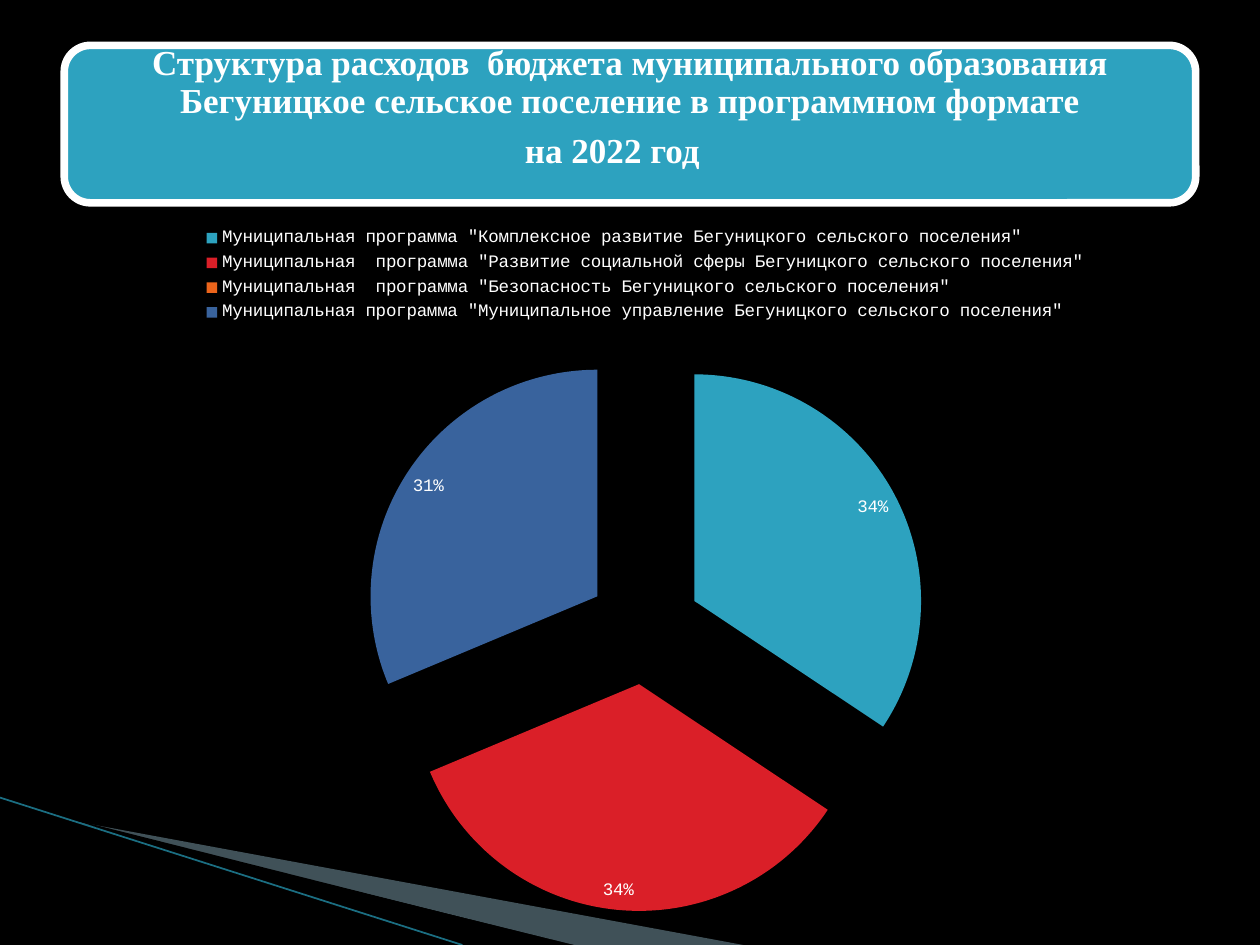
from collections import namedtuple
from dataclasses import dataclass

from lxml import etree
from pptx import Presentation
from pptx.chart.data import CategoryChartData
from pptx.dml.color import RGBColor
from pptx.enum.chart import XL_CHART_TYPE, XL_LABEL_POSITION, XL_LEGEND_POSITION
from pptx.enum.shapes import MSO_CONNECTOR, MSO_SHAPE
from pptx.enum.text import MSO_ANCHOR, PP_ALIGN
from pptx.oxml.ns import qn
from pptx.util import Inches, Pt

PIE = XL_CHART_TYPE.PIE_EXPLODED
BEST_FIT = XL_LABEL_POSITION.BEST_FIT
LEGEND_TOP = XL_LEGEND_POSITION.TOP
STRAIGHT = MSO_CONNECTOR.STRAIGHT
ROUNDED = MSO_SHAPE.ROUNDED_RECTANGLE
TOP = MSO_ANCHOR.TOP
CENTER = PP_ALIGN.CENTER

Box = namedtuple("Box", "left top width height")


@dataclass(frozen=True)
class Theme:
    background: str = "000000"
    text: str = "FFFFFF"
    banner: str = "2DA2BF"
    wedge: str = "A0CBDC"
    ray: str = "1B6E82"
    slices: tuple = ("2DA2BF", "DA1F28", "EB641B", "39639D")
    title_font: str = "Times New Roman"
    chart_font: str = "Courier New"
    title_size: int = 20
    chart_size: int = 10


THEME = Theme()

TITLE = (
    "Структура расходов  бюджета муниципального образования "
    "Бегуницкое сельское поселение в программном формате",
    "на 2022 год",
)
PROGRAMMES = {
    'Муниципальная программа "Комплексное развитие Бегуницкого сельского поселения"': 34,
    'Муниципальная  программа "Развитие социальной сферы Бегуницкого сельского поселения"': 34,
    'Муниципальная  программа "Безопасность Бегуницкого сельского поселения"': 0,
    'Муниципальная программа "Муниципальное управление Бегуницкого сельского поселения"': 31,
}


def paint(fill, color):
    fill.solid()
    fill.fore_color.rgb = RGBColor.from_string(color)


def style_font(font, name, size):
    font.name = name
    font.size = Pt(size)
    font.color.rgb = RGBColor.from_string(THEME.text)


def add_wedge(slide, box, points, color, opacity=100):
    """Draw a polygon whose points are offsets in inches from the box corner."""
    start, *rest = [(box.left + Inches(x), box.top + Inches(y)) for x, y in points]
    builder = slide.shapes.build_freeform(*start)
    builder.add_line_segments(rest, close=True)
    wedge = builder.convert_to_shape()
    wedge.shadow.inherit = False
    wedge.line.fill.background()
    paint(wedge.fill, color)
    if opacity < 100:
        tint = wedge.fill._xPr.find(".//" + qn("a:srgbClr"))
        etree.SubElement(tint, qn("a:alpha")).set("val", str(opacity * 1000))


def add_corner_decor(slide, box):
    # Pale wedge, with a dark one covering its lower edge
    add_wedge(slide, box, [(0.55, 0.18), (5.9, 1.17), (4.56, 1.17)], THEME.wedge, 40)
    add_wedge(slide, box, [(0.53, 0.16), (4.53, 1.17), (3.72, 1.17)], THEME.background)

    # Thin ray
    ray = slide.shapes.add_connector(
        STRAIGHT, box.left, box.top, box.left + Inches(3.67), box.top + box.height)
    ray.line.color.rgb = RGBColor.from_string(THEME.ray)
    ray.line.width = Pt(1)
    etree.SubElement(ray._element.spPr, qn("a:effectLst"))


def add_title_banner(slide, box):
    # Rounded panel
    panel = slide.shapes.add_shape(ROUNDED, *box)
    panel.shadow.inherit = False
    paint(panel.fill, THEME.banner)
    panel.line.color.rgb = RGBColor.from_string(THEME.text)
    panel.line.width = Pt(4.33)

    # Title text
    frame = slide.shapes.add_textbox(*box).text_frame
    frame.word_wrap = True
    frame.vertical_anchor = TOP
    frame.margin_top = frame.margin_bottom = 0
    frame.text = "\n".join(TITLE)
    for paragraph in frame.paragraphs:
        paragraph.alignment = CENTER
        paragraph.line_spacing = 0.9
        paragraph.space_after = Pt(7)
        style_font(paragraph.font, THEME.title_font, THEME.title_size)
        paragraph.font.bold = True
    # The year sits slightly left of centre
    frame.paragraphs[-1]._p.get_or_add_pPr().set("marR", str(Inches(0.28)))


def add_spending_chart(slide, box):
    data = CategoryChartData(number_format="0")
    data.categories = list(PROGRAMMES)
    data.add_series("Series 1", list(PROGRAMMES.values()))
    chart = slide.shapes.add_chart(PIE, *box, data).chart
    chart.has_title = False
    style_font(chart.font, THEME.chart_font, THEME.chart_size)

    # Legend
    chart.has_legend = True
    chart.legend.position = LEGEND_TOP
    chart.legend.include_in_layout = False

    # Slices
    plot = chart.plots[0]
    plot.vary_by_categories = True
    series = plot.series[0]
    series._element.find(qn("c:explosion")).set("val", "25")
    for index, color in enumerate(THEME.slices):
        point = series.points[index].format
        paint(point.fill, color)
        point.line.fill.background()

    # Percentage labels
    plot.has_data_labels = True
    labels = plot.data_labels
    labels.show_percentage = True
    labels.show_value = False
    labels.number_format = "0%"
    labels.number_format_is_linked = False
    labels.position = BEST_FIT
    style_font(labels.font, THEME.chart_font, THEME.chart_size)


def main():
    deck = Presentation()
    deck.slide_width = Inches(10)
    deck.slide_height = Inches(7.5)
    slide = deck.slides.add_slide(deck.slide_layouts[6])
    paint(slide.background.fill, THEME.background)

    add_corner_decor(slide, Box(0, Inches(6.33), Inches(6), Inches(1.17)))
    add_title_banner(slide, Box(Inches(0.51), Inches(0.36), Inches(8.98), Inches(1.25)))
    add_spending_chart(slide, Box(Inches(0.43), Inches(1.7), Inches(9.37), Inches(5.67)))
    deck.save("out.pptx")


if __name__ == "__main__":
    main()
